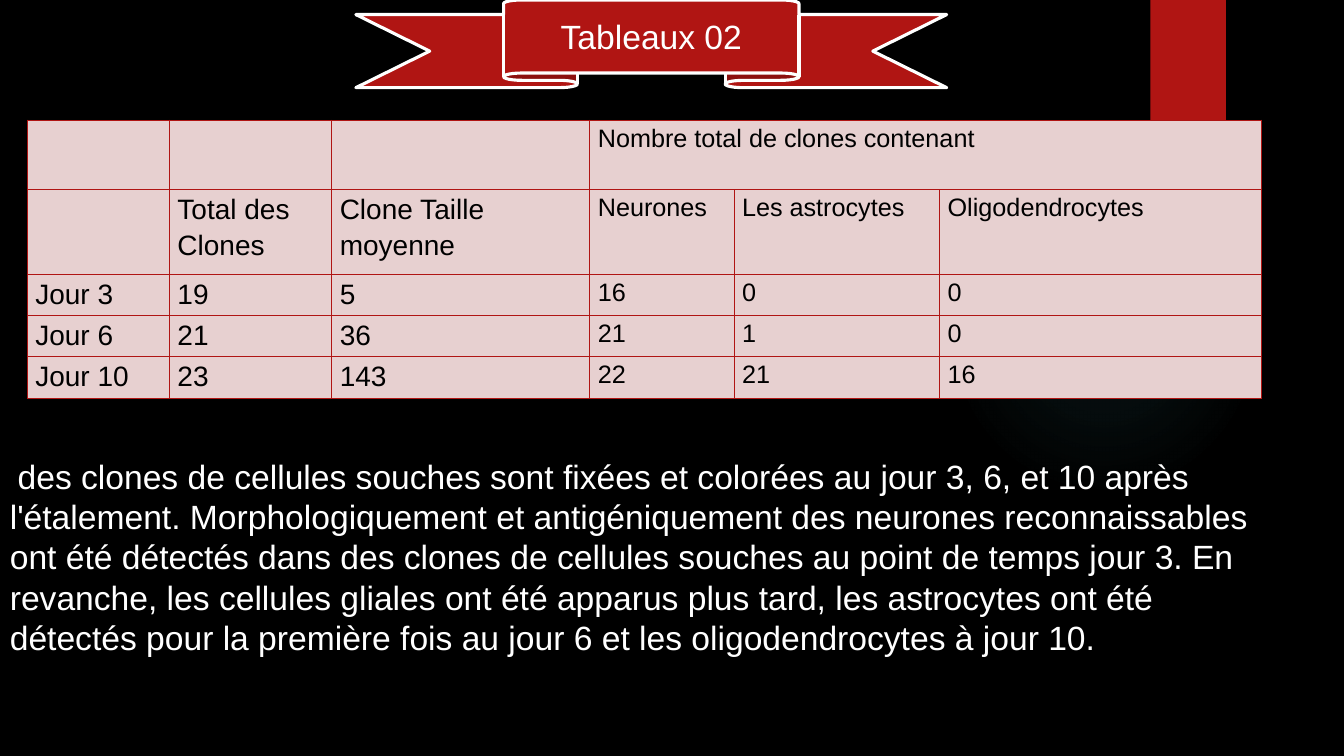
import pptx
import pptx.dml.color
import pptx.enum.shapes
import pptx.enum.text
import pptx.oxml
import pptx.oxml.ns
import pptx.util
from pptx.util import Inches

RED, PINK, WHITE, BLACK, TEAL = "B01513", "E7D0D0", "FFFFFF", "000000", "50B9C1"
DRAWING = pptx.oxml.ns.nsdecls("a")


def color(hex_value):
    return pptx.dml.color.RGBColor.from_string(hex_value)


def set_font(run, size, hex_value):
    run.font.name = "Arial"
    run.font.size = pptx.util.Pt(size)
    run.font.color.rgb = color(hex_value)


presentation = pptx.Presentation()
presentation.slide_width = Inches(13.33)
presentation.slide_height = Inches(7.5)
slide = presentation.slides.add_slide(presentation.slide_layouts[6])
slide.background.fill.solid()
slide.background.fill.fore_color.rgb = color(BLACK)
shapes = slide.shapes
shape_type = pptx.enum.shapes.MSO_SHAPE

# Faint round glow, fading outwards
glow = shapes.add_shape(shape_type.OVAL, Inches(9.41), Inches(1.83), Inches(3.08), Inches(3.08))
glow.shadow.inherit = False
glow.line.fill.background()
stops = "".join(
    f'<a:gs pos="{position * 1000}"><a:srgbClr val="{TEAL}">'
    f'<a:alpha val="{opacity * 1000}"/></a:srgbClr></a:gs>'
    for position, opacity in [(0, 7), (36, 6), (69, 0), (100, 0)]
)
gradient = pptx.oxml.parse_xml(
    f'<a:gradFill {DRAWING} rotWithShape="1"><a:gsLst>{stops}</a:gsLst><a:path path="circle">'
    '<a:fillToRect l="50000" t="50000" r="50000" b="50000"/></a:path></a:gradFill>'
)
glow.element.spPr.find(pptx.oxml.ns.qn("a:prstGeom")).addnext(gradient)

# Red tab and title ribbon
tab = shapes.add_shape(shape_type.RECTANGLE, Inches(11.41), 0, Inches(0.75), Inches(1.25))
ribbon = shapes.add_shape(shape_type.UP_RIBBON, Inches(3.53), 0, Inches(5.86), Inches(0.87))
for shape in (tab, ribbon):
    shape.shadow.inherit = False
    shape.fill.solid()
    shape.fill.fore_color.rgb = color(RED)
tab.line.fill.background()
ribbon.line.color.rgb = color(WHITE)
ribbon.line.width = pptx.util.Pt(2.25)
ribbon.text_frame.text = "Tableaux 02"
ribbon.text_frame.vertical_anchor = pptx.enum.text.MSO_ANCHOR.MIDDLE
title = ribbon.text_frame.paragraphs[0]
title.alignment = pptx.enum.text.PP_ALIGN.CENTER
set_font(title.runs[0], 24, WHITE)

# Clone table
rows = [
    ["", "", "", "Nombre total de clones contenant", "", ""],
    ["", "Total des Clones", "Clone Taille moyenne", "Neurones", "Les astrocytes", "Oligodendrocytes"],
    ["Jour 3", "19", "5", "16", "0", "0"],
    ["Jour 6", "21", "36", "21", "1", "0"],
    ["Jour 10", "23", "143", "22", "21", "16"],
]
column_widths = [1.41, 1.61, 2.56, 1.43, 2.04, 3.19]
row_heights = [0.69, 0.84, 0.41, 0.41, 0.41]
table = shapes.add_table(
    len(rows), len(column_widths), Inches(0.27), Inches(1.19), Inches(12.24), Inches(2.76)
).table
for column, width in zip(table.columns, column_widths):
    column.width = Inches(width)
for row, height in zip(table.rows, row_heights):
    row.height = Inches(height)
table.cell(0, 3).merge(table.cell(0, 5))

for row_index, texts in enumerate(rows):
    for column_index, text in enumerate(texts):
        cell = table.cell(row_index, column_index)
        cell.margin_left = cell.margin_right = Inches(0.08)
        cell.margin_top = cell.margin_bottom = 0
        properties = cell._tc.get_or_add_tcPr()
        for side in ("lnL", "lnR", "lnT", "lnB"):
            properties.append(pptx.oxml.parse_xml(
                f'<a:{side} {DRAWING} w="{pptx.util.Pt(0.75)}"><a:solidFill>'
                f'<a:srgbClr val="{RED}"/></a:solidFill></a:{side}>'
            ))
        cell.fill.solid()
        cell.fill.fore_color.rgb = color(PINK)
        if text:
            cell.text_frame.text = text
            paragraph = cell.text_frame.paragraphs[0]
            paragraph.line_spacing = 1.15
            paragraph.space_after = pptx.util.Pt(10)
            set_font(paragraph.runs[0], 20 if column_index < 3 else 18, BLACK)

# Explanation
explanation = shapes.add_textbox(0, Inches(4.46), Inches(12.87), Inches(2.12))
text_frame = explanation.text_frame
text_frame.word_wrap = True
text_frame.auto_size = pptx.enum.text.MSO_AUTO_SIZE.SHAPE_TO_FIT_TEXT
text_frame.vertical_anchor = pptx.enum.text.MSO_ANCHOR.MIDDLE
paragraph = text_frame.paragraphs[0]
for text, size, hex_value in [
    (" ", 20, BLACK),
    ("des clones de cellules souches sont fixées et colorées au jour 3, 6, et 10 après "
     "l'étalement. Morphologiquement et antigéniquement des neurones reconnaissables ont été "
     "détectés dans des clones de cellules souches au point de temps jour 3. En revanche, les "
     "cellules gliales ont été apparus plus tard, les astrocytes ont été détectés pour la "
     "première fois au jour 6 et les oligodendrocytes à jour 10.", 24, WHITE),
]:
    run = paragraph.add_run()
    run.text = text
    set_font(run, size, hex_value)

presentation.save("out.pptx")
